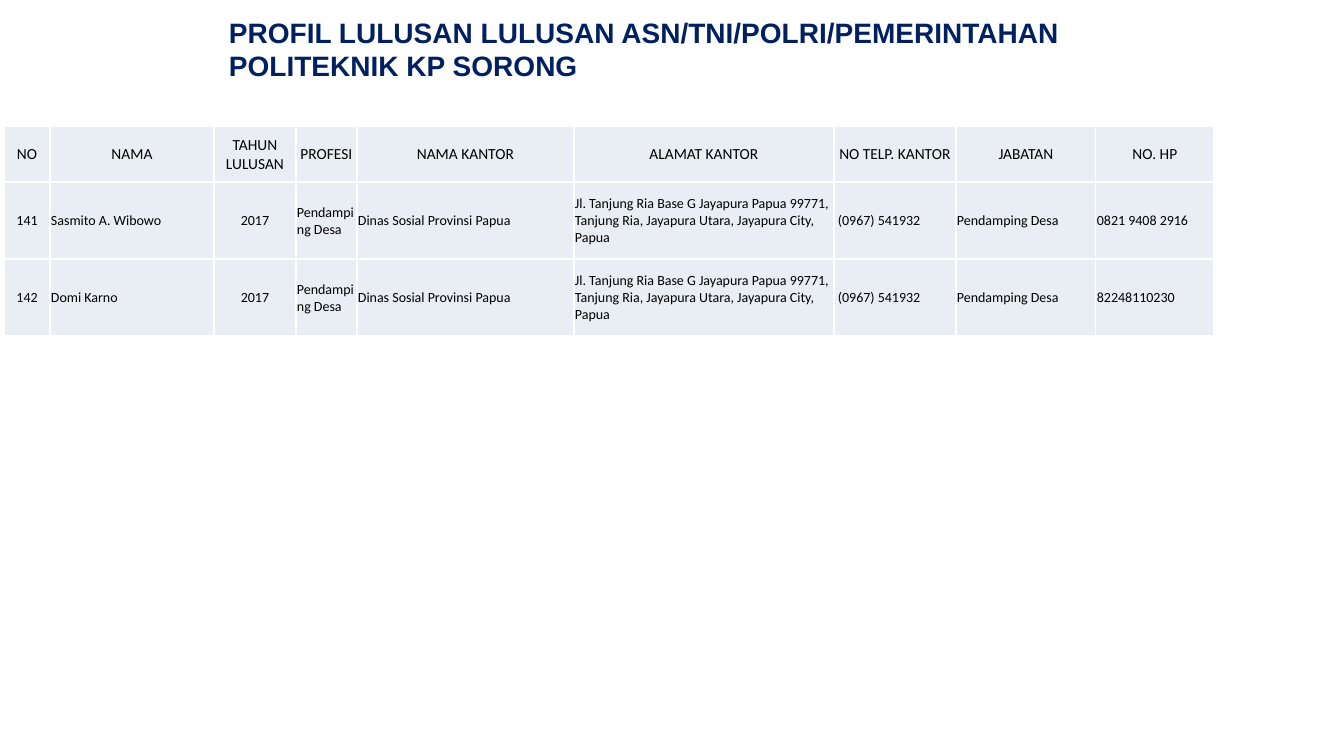
from dataclasses import dataclass

from lxml.etree import SubElement
from pptx import Presentation
from pptx.dml.color import RGBColor as Color
from pptx.enum.text import MSO_ANCHOR as Anchor, PP_ALIGN as Align
from pptx.oxml.ns import qn
from pptx.util import Emu, Pt

EMU_PER_PX = 914400 / 100.8


@dataclass(frozen=True)
class Theme:
    """Hold the colours, fonts and type sizes of the slide."""
    navy: str = "002060"
    black: str = "000000"
    white: str = "FFFFFF"
    cell_fill: str = "E9EDF4"
    title_font: str = "Arial"
    table_font: str = "Calibri"
    title_size: int = 20
    header_size: int = 11
    body_size: int = 10
    border_width: int = 1


THEME = Theme()
TITLE_LINES = [
    "PROFIL LULUSAN LULUSAN ASN/TNI/POLRI/PEMERINTAHAN",
    "POLITEKNIK KP SORONG",
]
COLUMNS = {
    "NO": 46,
    "NAMA": 164,
    "TAHUN LULUSAN": 82,
    "PROFESI": 61,
    "NAMA KANTOR": 217,
    "ALAMAT KANTOR": 260,
    "NO TELP. KANTOR": 122,
    "JABATAN": 140,
    "NO. HP": 118,
}
CENTRED_COLUMNS = {"NO", "TAHUN LULUSAN"}
PHONE_COLUMN = "NO TELP. KANTOR"
SHARED_OFFICE = [
    "2017",
    "Pendamping Desa",
    "Dinas Sosial Provinsi Papua",
    "Jl. Tanjung Ria Base G Jayapura Papua 99771, "
    "Tanjung Ria, Jayapura Utara, Jayapura City, Papua",
    "(0967) 541932",
    "Pendamping Desa",
]
GRADUATES = [
    ["141", "Sasmito A. Wibowo", *SHARED_OFFICE, "0821 9408 2916"],
    ["142", "Domi Karno", *SHARED_OFFICE, "82248110230"],
]
HEADER_HEIGHT, BODY_HEIGHT = 56, 77


def px(length):
    """Turn pixels into EMU."""
    return Emu(round(length * EMU_PER_PX))


def apply_format(target, values):
    """Set each named attribute on the target."""
    for name, value in values.items():
        setattr(target, name, value)


def write_paragraph(paragraph, text, color, **font_values):
    """Write one run of formatted text into a paragraph."""
    run = paragraph.add_run()
    run.text = text
    apply_format(run.font, font_values)
    run.font.color.rgb = Color.from_string(color)


def add_title(slide, lines, left, top, width, height):
    """Add the title box with one paragraph per line."""
    frame = slide.shapes.add_textbox(*map(px, (left, top, width, height))).text_frame
    apply_format(frame, {
        "word_wrap": True,
        "margin_left": px(10), "margin_right": px(10),
        "margin_top": px(5), "margin_bottom": px(5),
    })
    for index, line in enumerate(lines):
        paragraph = frame.add_paragraph() if index else frame.paragraphs[0]
        write_paragraph(paragraph, line, THEME.navy, name=THEME.title_font,
                        size=Pt(THEME.title_size), bold=True)


def add_borders(cell):
    """Draw a thin white line on all four sides of a cell."""
    properties = cell._tc.get_or_add_tcPr()
    for side in ("a:lnL", "a:lnR", "a:lnT", "a:lnB"):
        line = SubElement(properties, qn(side), w=str(Pt(THEME.border_width)))
        fill = SubElement(line, qn("a:solidFill"))
        SubElement(fill, qn("a:srgbClr"), val=THEME.white)


def fill_cell(cell, text, size, centred, indent):
    """Write and style one table cell."""
    apply_format(cell, {
        "vertical_anchor": Anchor.MIDDLE,
        "margin_left": px(indent), "margin_right": px(1),
        "margin_top": px(1), "margin_bottom": 0,
    })
    add_borders(cell)
    cell.fill.solid()
    cell.fill.fore_color.rgb = Color.from_string(THEME.cell_fill)
    paragraph = cell.text_frame.paragraphs[0]
    paragraph.alignment = Align.CENTER if centred else Align.LEFT
    write_paragraph(paragraph, text, THEME.black, name=THEME.table_font,
                    size=Pt(size), bold=False)


def add_graduate_table(slide, left, top):
    """Add the table of graduates below its header row."""
    rows = [list(COLUMNS), *GRADUATES]
    heights = [HEADER_HEIGHT] + [BODY_HEIGHT] * len(GRADUATES)
    bounds = (left, top, sum(COLUMNS.values()), sum(heights))
    table = slide.shapes.add_table(len(rows), len(COLUMNS), *map(px, bounds)).table
    apply_format(table, {"first_row": False, "horz_banding": False})
    for column, width in zip(table.columns, COLUMNS.values()):
        column.width = px(width)
    for row_index, (values, height) in enumerate(zip(rows, heights)):
        table.rows[row_index].height = px(height)
        header = row_index == 0
        size = THEME.header_size if header else THEME.body_size
        for column_index, (name, text) in enumerate(zip(COLUMNS, values)):
            indent = 4 if name == PHONE_COLUMN and not header else 1
            fill_cell(table.cell(row_index, column_index), text, size,
                      header or name in CENTRED_COLUMNS, indent)


def main():
    """Build the slide and save it."""
    presentation = Presentation()
    apply_format(presentation, {"slide_width": px(1344), "slide_height": px(756)})
    slide = presentation.slides.add_slide(presentation.slide_layouts[6])
    add_title(slide, TITLE_LINES, 219, 10, 1058, 78)
    add_graduate_table(slide, 4, 126)
    presentation.save("out.pptx")


if __name__ == "__main__":
    main()
